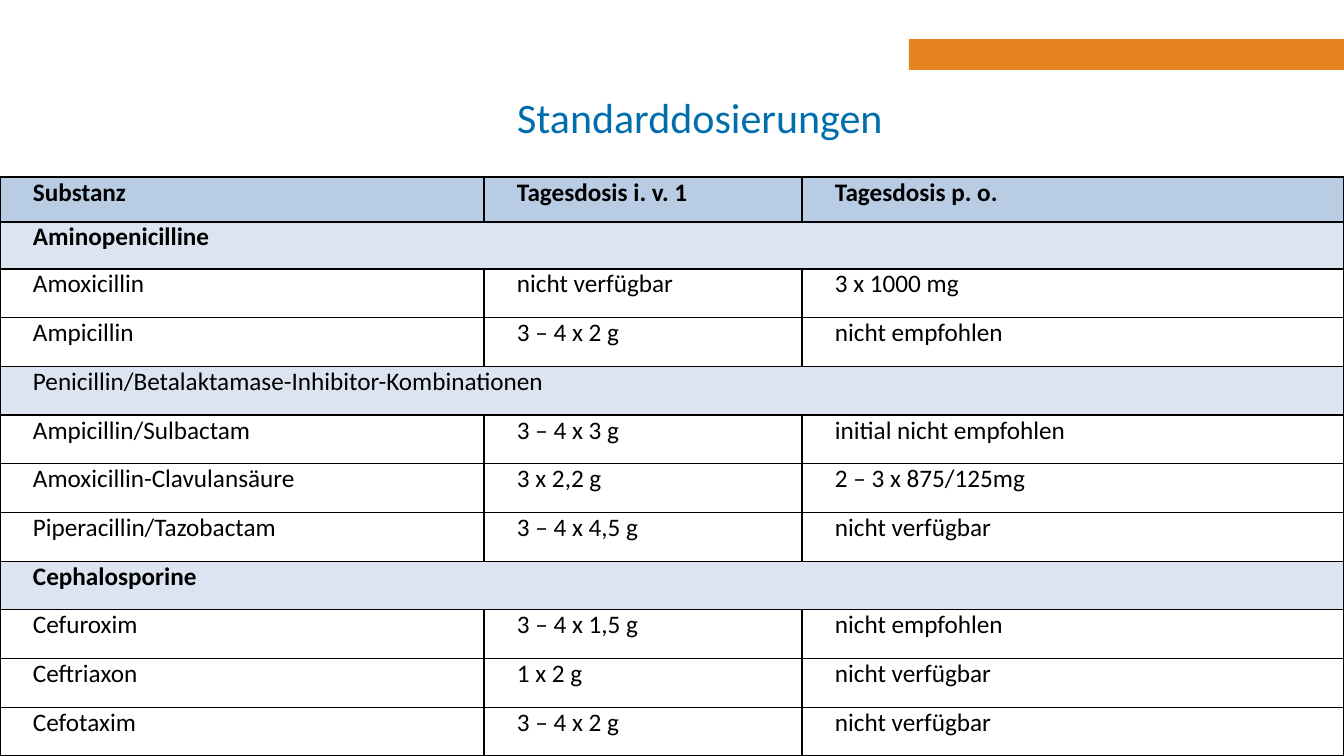
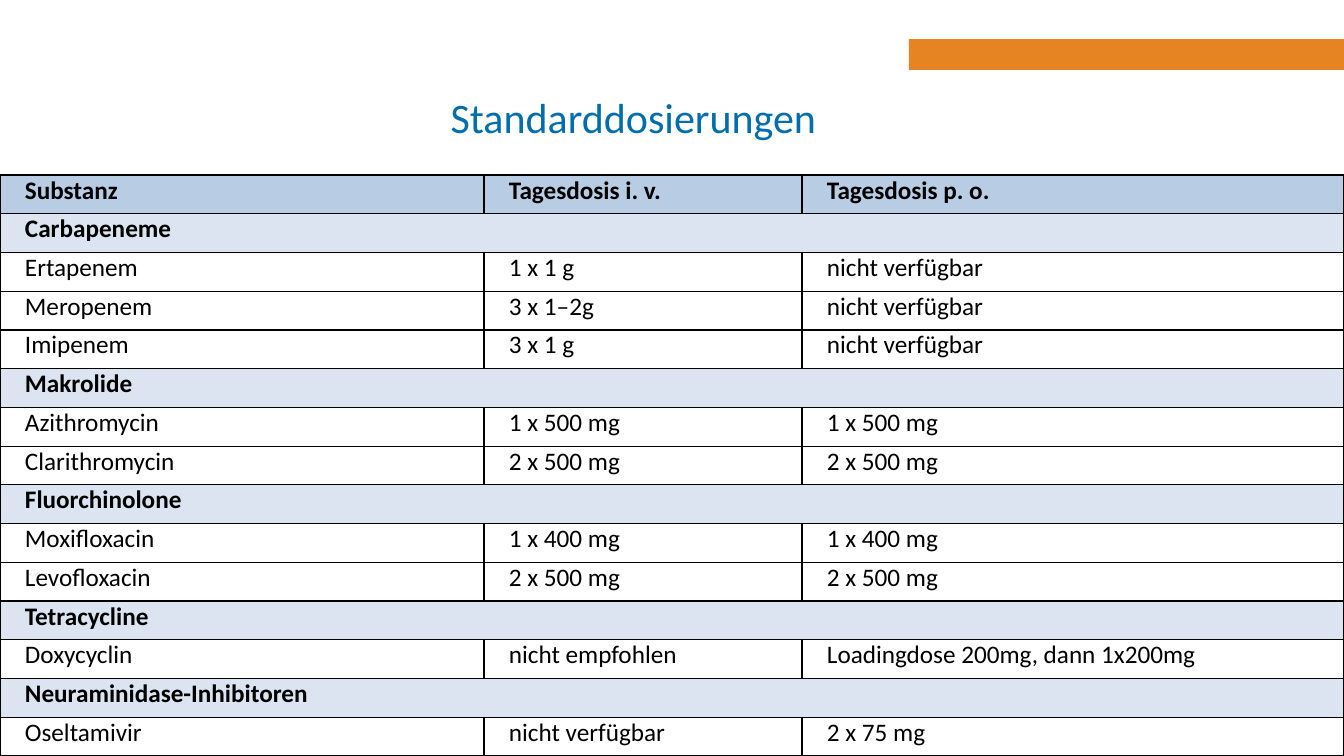
"""Builds two slides of standard antibiotic doses as tables."""
import pptx
import pptx.dml.color
import pptx.enum.shapes
import pptx.enum.text
import pptx.oxml
import pptx.oxml.ns
import pptx.util

PX = 914400 / 100.8
SLIDE_WIDTH, SLIDE_HEIGHT = 1344, 756
FONT = "Calibri"
COLORS = {
    "accent": "E68323",
    "title": "006EAC",
    "text": "000000",
    "border": "000000",
    "header": "B8CCE4",
    "group": "DBE4F0",
}
BAND = (909, 39, 435, 31)
TITLE_LEFT, TITLE_TOP, TITLE_HEIGHT = 216, 70, 93
COLUMNS = (484, 318, 542)
PLAIN_GROUPS = {"Penicillin/Betalaktamase-Inhibitor-Kombinationen"}

SLIDES = [
    {
        "title": "Standarddosierungen",
        "title_width": 968,
        "top": 177,
        "first_rows": (45, 47),
        "inset": 33,
        "header": ("Substanz", "Tagesdosis i. v. 1", "Tagesdosis p. o."),
        "groups": {
            "Aminopenicilline": [
                ("Amoxicillin", "nicht verfügbar", "3 x 1000 mg"),
                ("Ampicillin", "3 – 4 x 2 g", "nicht empfohlen"),
            ],
            "Penicillin/Betalaktamase-Inhibitor-Kombinationen": [
                ("Ampicillin/Sulbactam", "3 – 4 x 3 g", "initial nicht empfohlen"),
                ("Amoxicillin-Clavulansäure", "3 x 2,2 g", "2 – 3 x 875/125mg "),
                ("Piperacillin/Tazobactam", "3 – 4 x 4,5 g", "nicht verfügbar"),
            ],
            "Cephalosporine": [
                ("Cefuroxim", "3 – 4 x 1,5 g", "nicht empfohlen"),
                ("Ceftriaxon", "1 x 2 g", "nicht verfügbar"),
                ("Cefotaxim", "3 – 4 x 2 g", "nicht verfügbar"),
            ],
        },
    },
    {
        "title": "Standarddosierungen",
        "title_width": 835,
        "top": 175,
        "first_rows": (),
        "inset": 25,
        "header": ("Substanz", "Tagesdosis i. v.", "Tagesdosis p. o."),
        "groups": {
            "Carbapeneme": [
                ("Ertapenem", "1 x 1 g", "nicht verfügbar"),
                ("Meropenem", "3 x 1–2g", "nicht verfügbar"),
                ("Imipenem", "3 x 1 g", "nicht verfügbar"),
            ],
            "Makrolide": [
                ("Azithromycin", "1 x 500 mg", "1 x 500 mg"),
                ("Clarithromycin", "2 x 500 mg", "2 x 500 mg"),
            ],
            "Fluorchinolone": [
                ("Moxifloxacin", "1 x 400 mg", "1 x 400 mg"),
                ("Levofloxacin", "2 x 500 mg", "2 x 500 mg"),
            ],
            "Tetracycline": [
                ("Doxycyclin", "nicht empfohlen", "Loadingdose 200mg, dann 1x200mg"),
            ],
            "Neuraminidase-Inhibitoren": [
                ("Oseltamivir", "nicht verfügbar", "2 x 75 mg"),
            ],
        },
    },
]


def px(length):
    return pptx.util.Emu(round(length * PX))


def color(name):
    return pptx.dml.color.RGBColor.from_string(COLORS[name])


def set_font(paragraph, size, color_name, bold=False):
    font = paragraph.font
    font.name, font.size, font.bold = FONT, pptx.util.Pt(size), bold
    font.color.rgb = color(color_name)


def add_band(slide):
    band = slide.shapes.add_shape(
        pptx.enum.shapes.MSO_SHAPE.RECTANGLE, *map(px, BAND))
    band.shadow.inherit = False
    band.fill.solid()
    band.fill.fore_color.rgb = color("accent")
    band.line.fill.background()


def add_title(slide, text, width):
    frame = slide.shapes.add_textbox(
        px(TITLE_LEFT), px(TITLE_TOP), px(width), px(TITLE_HEIGHT)).text_frame
    frame.word_wrap = True
    frame.vertical_anchor = pptx.enum.text.MSO_ANCHOR.MIDDLE
    paragraph = frame.paragraphs[0]
    paragraph.text = text
    paragraph.alignment = pptx.enum.text.PP_ALIGN.CENTER
    set_font(paragraph, 30, "title")


def add_borders(cell):
    properties = cell._tc.get_or_add_tcPr()
    for side in "LRTB":
        properties.append(pptx.oxml.parse_xml(
            f'<a:ln{side} {pptx.oxml.ns.nsdecls("a")} w="12700"><a:solidFill>'
            f'<a:srgbClr val="{COLORS["border"]}"/></a:solidFill></a:ln{side}>'))


def style_cell(cell, text, inset, fill, bold):
    cell.margin_left = px(inset)
    cell.margin_top = cell.margin_right = cell.margin_bottom = 0
    add_borders(cell)
    if fill:
        cell.fill.solid()
        cell.fill.fore_color.rgb = color(fill)
    else:
        cell.fill.background()
    paragraph = cell.text_frame.paragraphs[0]
    paragraph.text = text
    set_font(paragraph, 18, "text", bold)


def list_rows(content):
    rows = [(content["header"], "header", True)]
    for group, substances in content["groups"].items():
        rows.append(((group, "", ""), "group", group not in PLAIN_GROUPS))
        rows += [(substance, None, False) for substance in substances]
    return rows


def add_doses(slide, content):
    rows = list_rows(content)
    top, first = content["top"], content["first_rows"]
    height = SLIDE_HEIGHT - top
    others = len(rows) - len(first)
    heights = list(first) + [(height - sum(first)) / others] * others
    doses = slide.shapes.add_table(
        len(rows), len(COLUMNS), 0, px(top), px(SLIDE_WIDTH), px(height)).table
    doses.first_row = doses.horz_banding = False
    for column, width in zip(doses.columns, COLUMNS):
        column.width = px(width)
    for index, (texts, fill, bold) in enumerate(rows):
        doses.rows[index].height = px(heights[index])
        for column, text in enumerate(texts):
            style_cell(doses.cell(index, column), text, content["inset"], fill, bold)
        if fill == "group":
            doses.cell(index, 0).merge(doses.cell(index, len(COLUMNS) - 1))


def main():
    deck = pptx.Presentation()
    deck.slide_width, deck.slide_height = px(SLIDE_WIDTH), px(SLIDE_HEIGHT)
    for content in SLIDES:
        slide = deck.slides.add_slide(deck.slide_layouts[6])
        add_band(slide)
        add_title(slide, content["title"], content["title_width"])
        add_doses(slide, content)
    deck.save("out.pptx")


if __name__ == "__main__":
    main()
